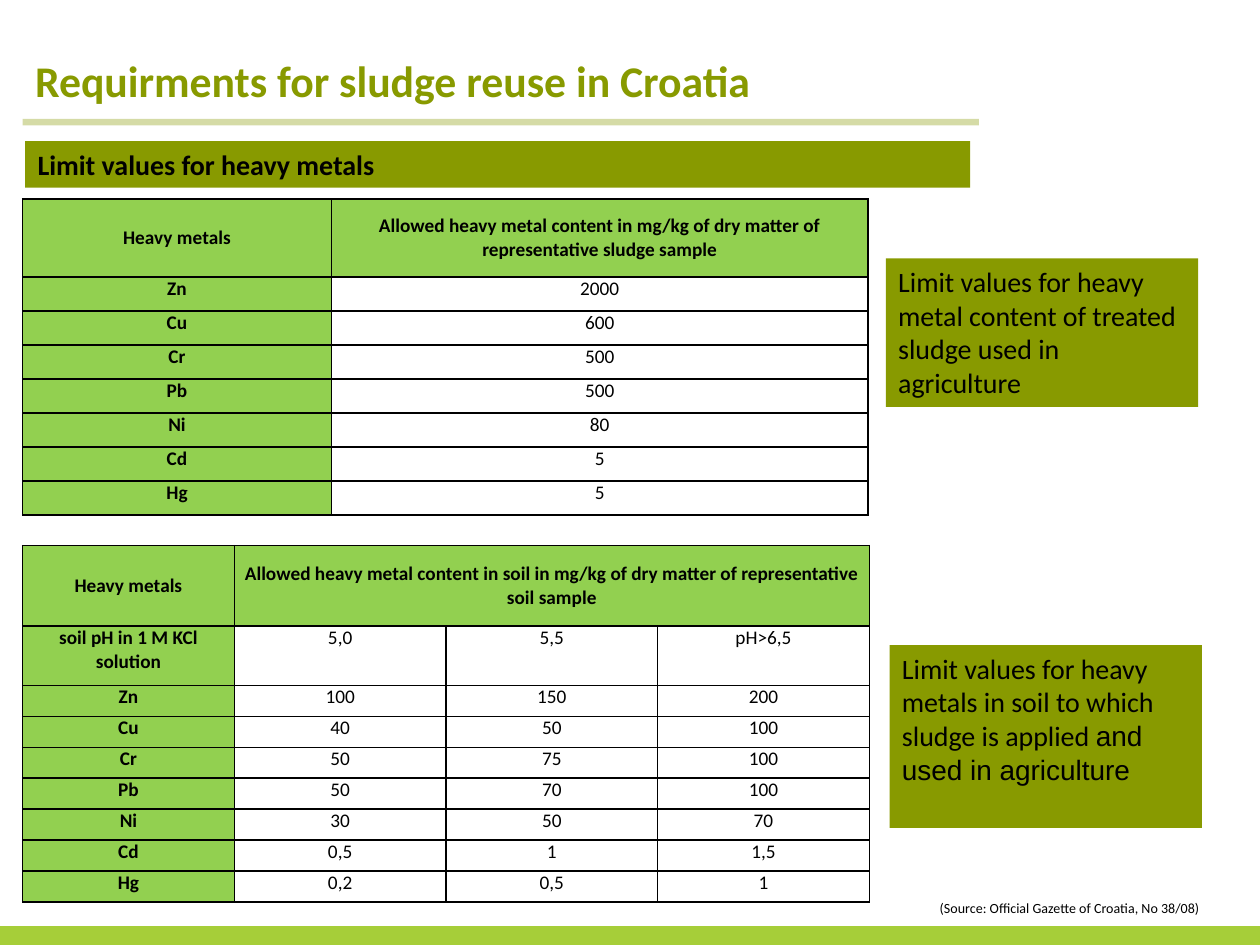
from dataclasses import dataclass

from lxml.etree import SubElement
from pptx import Presentation
from pptx.dml.color import RGBColor
from pptx.enum.shapes import MSO_CONNECTOR as LINE, MSO_SHAPE as SHAPE
from pptx.enum.text import MSO_ANCHOR as ANCHOR, PP_ALIGN as ALIGN
from pptx.oxml.ns import qn
from pptx.util import Inches, Pt


@dataclass(frozen=True)
class Theme:
    olive: str = "889A00"
    lime: str = "A6CE39"
    green: str = "92D050"
    ink: str = "000000"
    font: str = "Calibri"
    alt: str = "Arial"
    title: int = 25
    body: int = 16
    cell: int = 11
    note: int = 8


class Deck:
    def __init__(self, theme):
        self.theme = theme
        self.prs = Presentation()
        self.prs.slide_width, self.prs.slide_height = Inches(10), Inches(7.5)
        self.slide = self.prs.slides.add_slide(self.prs.slide_layouts[6])

    def run(self, para, text, size, color=None, bold=False, font=None):
        run = para.add_run()
        run.text = text
        face = run.font
        face.name = font or self.theme.font
        face.size, face.bold = Pt(size), bold
        face.color.rgb = RGBColor.from_string(color or self.theme.ink)

    def text(self, box, text, size, color=None, bold=False):
        """Add one wrapped paragraph to a text box and return it."""
        item = self.slide.shapes.add_textbox(*map(Inches, box))
        item.text_frame.word_wrap = True
        para = item.text_frame.paragraphs[0]
        self.run(para, text, size, color, bold)
        return para

    def panel(self, box, fill, runs=(), bold=False):
        """Draw a filled block; runs are (text, font) pairs."""
        item = self.slide.shapes.add_shape(SHAPE.RECTANGLE, *map(Inches, box))
        item.shadow.inherit = False
        item.fill.solid()
        item.fill.fore_color.rgb = RGBColor.from_string(fill)
        item.line.fill.background()
        frame = item.text_frame
        frame.word_wrap, frame.vertical_anchor = True, ANCHOR.TOP
        para = frame.paragraphs[0]
        para.alignment = ALIGN.LEFT
        for text, font in runs:
            self.run(para, text, self.theme.body, bold=bold, font=font)

    def rule(self, x, y, end, color, width, alpha):
        """Draw a level line; alpha is its opacity in percent."""
        line = self.slide.shapes.add_connector(
            LINE.STRAIGHT, Inches(x), Inches(y), Inches(end), Inches(y))
        line.line.color.rgb = RGBColor.from_string(color)
        line.line.width = Pt(width)
        props = line.element.spPr
        tint = props.find(".//" + qn("a:srgbClr"))
        SubElement(tint, qn("a:alpha"), val=str(alpha * 1000))
        SubElement(props, qn("a:effectLst"))

    def edge(self, cell):
        """Put a 1 pt line on all four sides of a cell."""
        props = cell._tc.get_or_add_tcPr()
        for spot, side in enumerate(("a:lnL", "a:lnR", "a:lnT", "a:lnB")):
            line = props.makeelement(qn(side), {"w": str(Pt(1))})
            fill = SubElement(line, qn("a:solidFill"))
            SubElement(fill, qn("a:srgbClr"), val=self.theme.ink)
            props.insert(spot, line)

    def table(self, x, y, cols, highs, rows):
        """Build a grid whose first row and column are headings."""
        frame = self.slide.shapes.add_table(
            len(rows), len(cols), Inches(x), Inches(y),
            Inches(sum(cols)), Inches(sum(highs)))
        grid = frame.table
        for col, width in zip(grid.columns, cols):
            col.width = Inches(width)
        for row, high in zip(grid.rows, highs):
            row.height = Inches(high)
        if len(rows[0]) < len(cols):
            grid.cell(0, 1).merge(grid.cell(0, len(cols) - 1))
        for r in range(len(rows)):
            for c in range(len(cols)):
                cell = grid.cell(r, c)
                head = r == 0 or c == 0
                if head:
                    cell.fill.solid()
                    cell.fill.fore_color.rgb = RGBColor.from_string(self.theme.green)
                else:
                    cell.fill.background()
                self.edge(cell)
                cell.margin_left = cell.margin_right = Inches(0.07)
                cell.margin_top = cell.margin_bottom = 0
                cell.vertical_anchor = ANCHOR.TOP if r else ANCHOR.MIDDLE
                if c < len(rows[r]):
                    para = cell.text_frame.paragraphs[0]
                    para.alignment = ALIGN.CENTER
                    self.run(para, rows[r][c], self.theme.cell, bold=head)


def main():
    theme = Theme()
    deck = Deck(theme)
    left = 0.18
    metals = ("Zn", "Cu", "Cr", "Pb", "Ni", "Cd", "Hg")
    sludge = ("2000", "600", "500", "500", "80", "5", "5")
    soil = (("100", "150", "200"), ("40", "50", "100"), ("50", "75", "100"),
            ("50", "70", "100"), ("30", "50", "70"), ("0,5", "1", "1,5"),
            ("0,2", "0,5", "1"))

    deck.panel((0, 7.35, 10, 0.15), theme.lime)
    deck.rule(left, 0.97, 7.77, theme.olive, 3.75, 35)
    title = deck.text((left, 0.61, 8.09, 0.28),
                      "Requirments for sludge reuse in Croatia",
                      theme.title, theme.olive, True)
    title.line_spacing = Pt(13)

    deck.panel((7.06, 5.12, 2.48, 1.45), theme.olive, [
        ("Limit values for heavy metals in soil to which sludge is applied ", theme.font),
        ("and used in agriculture", theme.alt)])
    deck.panel((7.03, 2.05, 2.48, 1.18), theme.olive, [
        ("Limit values for heavy metal content of treated sludge used in agriculture",
         theme.font)])

    deck.table(left, 1.58, [2.45, 4.26], [0.62] + [0.27] * len(metals), [
        ("Heavy metals",
         "Allowed heavy metal content in mg/kg of dry matter of representative sludge sample"),
        *zip(metals, sludge)])
    deck.table(left, 4.33, [1.68] * 4, [0.64, 0.47] + [0.246] * len(metals), [
        ("Heavy metals",
         "Allowed heavy metal content in soil in mg/kg of dry matter of "
         "representative soil sample"),
        ("soil pH in 1 M KCl solution", "5,0", "5,5", "pH>6,5"),
        *((name, *vals) for name, vals in zip(metals, soil))])

    deck.text((7.36, 7.09, 2.52, 0.24),
              "(Source: Official Gazette of Croatia, No 38/08)", theme.note)
    deck.panel((0.2, 1.12, 7.5, 0.37), theme.olive,
               [("Limit values for heavy metals", theme.font)], bold=True)
    deck.prs.save("out.pptx")


if __name__ == "__main__":
    main()
